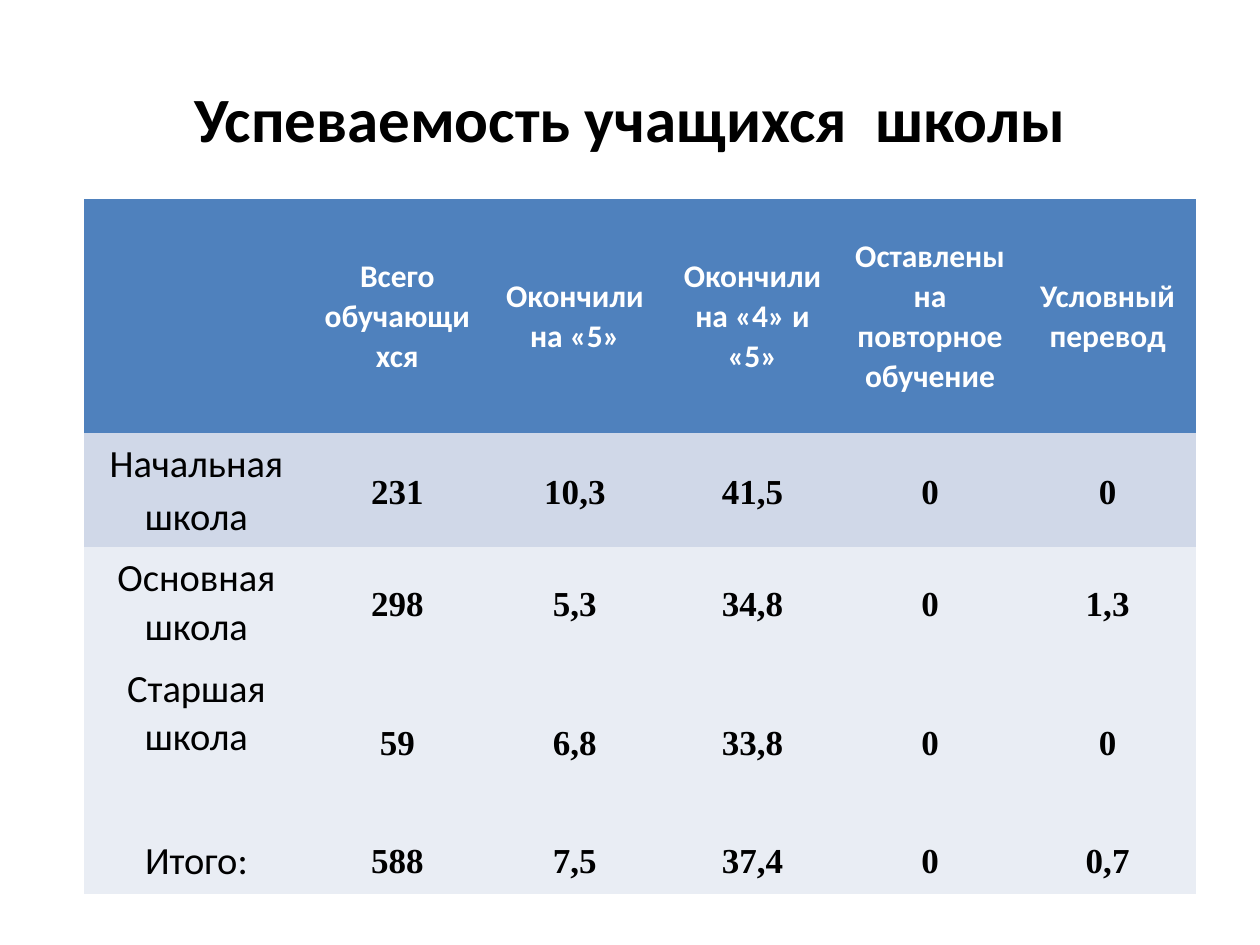
from pptx import Presentation
from pptx import util as u
from pptx.dml.color import RGBColor
from pptx.enum import text

NO_STYLE = "{2D5ABB26-0587-4C30-8999-92F81FD0307C}"
HEADER_FILL, BAND_FILL, PLAIN_FILL = "4F81BD", "D0D8E8", "E9EDF4"
COLUMN_WIDTHS = [4.52] + [3.58] * 5
ROW_HEIGHTS = [4.72, 2.3, 2.22, 3.35, 1.42]
HEADERS = ["", "Всего обучающихся", "Окончили на «5»", "Окончили на «4» и «5»",
           "Оставлены на повторное обучение", "Условный перевод"]
RESULTS = [
    ["Начальная\nшкола", "231", "10,3", "41,5", "0", "0"],
    ["Основная школа", "298", "5,3", "34,8", "0", "1,3"],
    ["Старшая школа", "59", "6,8", "33,8", "0", "0"],
    ["Итого:", "588", "7,5", "37,4", "0", "0,7"],
]


def rgb(value):
    """Return the colour for a hex string."""
    return RGBColor.from_string(value)


def write(tf, content, size, font="Calibri", color="000000", bold=False, spacings=(1.0,)):
    """Write centred paragraphs, one for each line and its spacing."""
    tf.word_wrap = True
    for i, line in enumerate(content.split("\n")):
        p = tf.paragraphs[0] if i == 0 else tf.add_paragraph()
        p.alignment = text.PP_ALIGN.CENTER
        p.line_spacing = spacings[i]
        r = p.add_run()
        r.text = line
        r.font.size = u.Pt(size)
        r.font.name = font
        r.font.bold = bold
        r.font.color.rgb = rgb(color)


def add_title(s, content):
    """Add the slide title."""
    sp = s.shapes.add_textbox(u.Cm(1.27), u.Cm(0.71), u.Cm(22.86), u.Cm(3.3))
    sp.text_frame.vertical_anchor = text.MSO_ANCHOR.MIDDLE
    write(sp.text_frame, content, 36, bold=True)


def fill_cell(cell, content, fill, margins=(0.25, 0.13), anchor=text.MSO_ANCHOR.MIDDLE, **fmt):
    """Set the fill, margins, anchor and text of a table cell."""
    cell.fill.solid()
    cell.fill.fore_color.rgb = rgb(fill)
    cell.margin_left = cell.margin_right = u.Cm(margins[0])
    cell.margin_top = cell.margin_bottom = u.Cm(margins[1])
    cell.vertical_anchor = anchor
    if content:
        write(cell.text_frame, content, **fmt)


def add_results_table(s):
    """Add the table of school results."""
    frame = s.shapes.add_table(len(ROW_HEIGHTS), len(COLUMN_WIDTHS), u.Cm(1.7), u.Cm(4.01),
                               u.Cm(sum(COLUMN_WIDTHS)), u.Cm(sum(ROW_HEIGHTS)))
    table = frame.table
    table._tbl.tblPr[0].text = NO_STYLE
    table.horz_banding = False
    for column, width in zip(table.columns, COLUMN_WIDTHS):
        column.width = u.Cm(width)
    for row, height in zip(table.rows, ROW_HEIGHTS):
        row.height = u.Cm(height)
    for j, header in enumerate(HEADERS):
        fill_cell(table.cell(0, j), header, HEADER_FILL, size=18, color="FFFFFF",
                  bold=True, spacings=(1.04,))
    for i, (label, *values) in enumerate(RESULTS, 1):
        fill = BAND_FILL if i == 1 else PLAIN_FILL
        anchor = text.MSO_ANCHOR.TOP if i == 3 else text.MSO_ANCHOR.MIDDLE
        spacings = (1.12,) if i == len(RESULTS) else (1.04, 1.12)
        fill_cell(table.cell(i, 0), label, fill, anchor=anchor, size=22, spacings=spacings)
        for j, value in enumerate(values, 1):
            fill_cell(table.cell(i, j), value, fill, margins=(0.18, 0), size=20,
                      font="Times New Roman", bold=True, spacings=(1.15,))


def main():
    """Build and save the slide."""
    prs = Presentation()
    prs.slide_width, prs.slide_height = u.Cm(25.4), u.Cm(19.05)
    s = prs.slides.add_slide(prs.slide_layouts[6])
    add_title(s, "Успеваемость учащихся  школы")
    add_results_table(s)
    prs.save("out.pptx")


if __name__ == "__main__":
    main()
